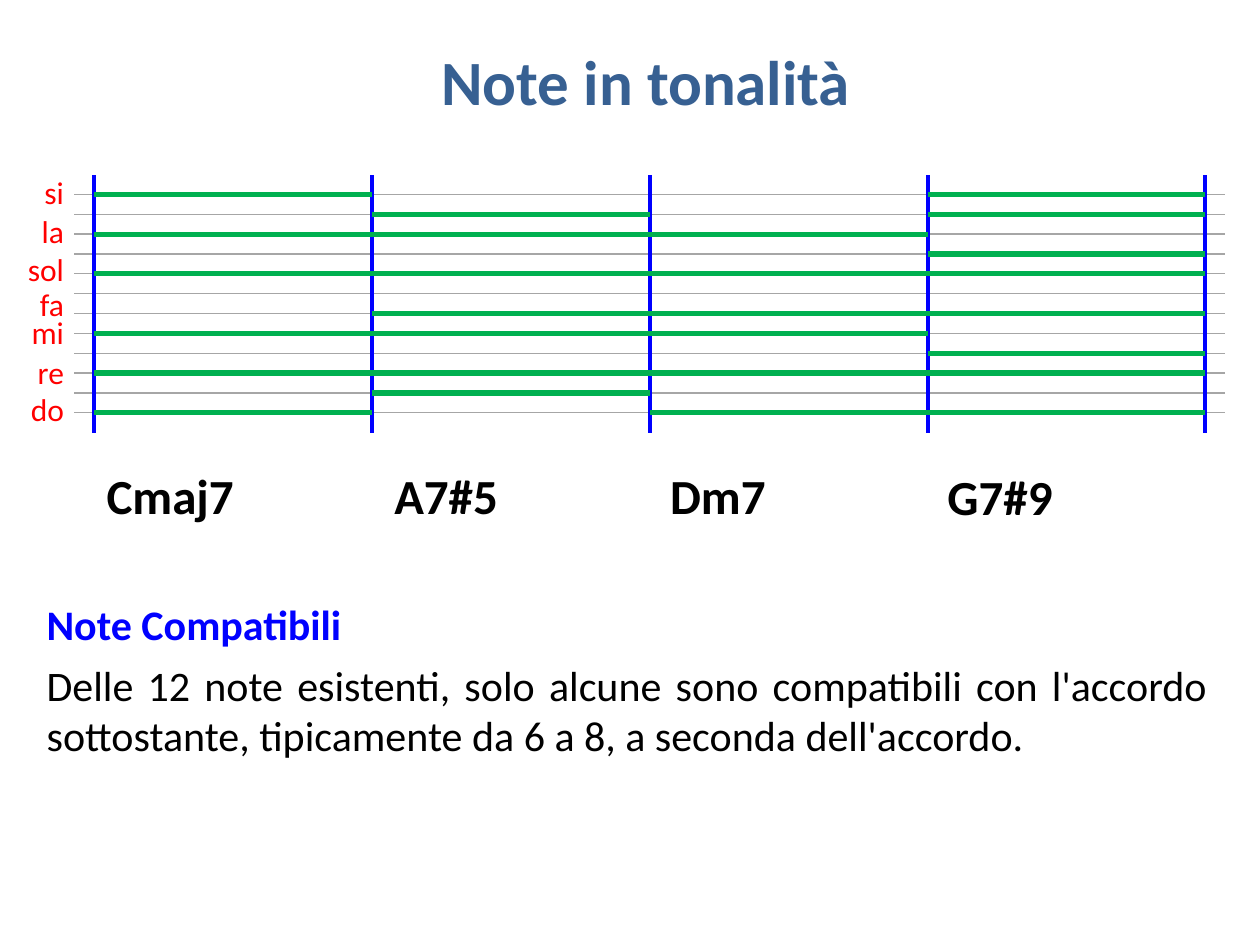
"""Build a slide that shows which notes fit each chord of a progression."""
import dataclasses

import lxml.etree
import pptx
import pptx.dml.color
import pptx.enum.shapes
import pptx.enum.text
import pptx.oxml.ns
import pptx.util

Cm = pptx.util.Cm
Pt = pptx.util.Pt
Align = pptx.enum.text.PP_ALIGN
Auto = pptx.enum.text.MSO_AUTO_SIZE


@dataclasses.dataclass(frozen=True)
class Theme:
    font: str = "Calibri"
    title: str = "376092"
    blue: str = "0000FF"
    grey: str = "A6A6A6"
    green: str = "00B050"
    red: str = "FF0000"
    black: str = "000000"
    head: int = 36
    chord: int = 28
    body: int = 24
    note: int = 18
    thin: float = 0.75
    bar: float = 2.25
    thick: float = 3


class Page:
    def __init__(self, deck, theme):
        self.theme = theme
        self.slide = deck.slides.add_slide(deck.slide_layouts[6])
        self.shapes = self.slide.shapes

    def line(self, x1, y1, x2, y2, color, width, group=None):
        shapes = group.shapes if group is not None else self.shapes
        line = shapes.add_connector(
            pptx.enum.shapes.MSO_CONNECTOR.STRAIGHT, Cm(x1), Cm(y1), Cm(x2), Cm(y2))
        line.line.color.rgb = pptx.dml.color.RGBColor.from_string(color)
        line.line.width = Pt(width)
        lxml.etree.SubElement(line.element.spPr, pptx.oxml.ns.qn("a:effectLst"))

    def text(self, left, top, width, height, wrap=True):
        box = self.shapes.add_textbox(Cm(left), Cm(top), Cm(width), Cm(height))
        frame = box.text_frame
        frame.word_wrap = wrap
        frame.auto_size = Auto.SHAPE_TO_FIT_TEXT
        return frame

    def para(self, frame, words, size, color, bold=False, align=Align.LEFT,
             before=None, space=None):
        first = frame.paragraphs[0]
        para = frame.add_paragraph() if first.runs else first
        para.add_run().text = words
        para.alignment = align
        para.font.name = self.theme.font
        para.font.size = Pt(size)
        para.font.bold = bold
        para.font.color.rgb = pptx.dml.color.RGBColor.from_string(color)
        if before is not None:
            para.space_before = Pt(before)
        if space is not None:
            para.line_spacing = Pt(space)


LEFT, TOP = 1.9, 3.92
BEAT, STEP, EDGE = 5.6, 0.4, 0.4
ROWS = 12
CHORDS = [
    ("Cmaj7", 1.9, 9.25, 3.1, (0, 2, 4, 7, 9, 11)),
    ("A7#5", 7.7, 9.25, 2.64, (1, 2, 4, 6, 7, 9, 10)),
    ("Dm7", 13.26, 9.25, 2.46, (2, 4, 6, 7, 9, 11)),
    ("G7#9", 18.85, 9.27, 2.67, (0, 1, 3, 4, 6, 8, 9, 11)),
]
NOTES = [("si", 22), ("la", 22), ("sol", 22), ("fa", 20), ("mi", 16), ("re", 23), ("do", 21)]


def main():
    deck = pptx.Presentation()
    deck.slide_width, deck.slide_height = Cm(25.4), Cm(19.05)
    theme = Theme()
    page = Page(deck, theme)

    title = page.text(2.54, 0.74, 20.96, 1.8)
    page.para(title, "Note in tonalità", theme.head, theme.title, True, Align.CENTER)

    grid = page.shapes.add_group_shape()
    right = LEFT + BEAT * len(CHORDS)
    base = TOP + STEP * (ROWS - 1)
    for row in range(ROWS):
        y = TOP + row * STEP
        page.line(LEFT - EDGE, y, right + EDGE, y, theme.grey, theme.thin, grid)
    for beat in range(len(CHORDS) + 1):
        x = LEFT + beat * BEAT
        page.line(x, base + EDGE, x, TOP - EDGE, theme.blue, theme.bar, grid)

    for beat, (name, left, top, width, rows) in enumerate(CHORDS):
        x = LEFT + beat * BEAT
        for row in rows:
            y = TOP + row * STEP
            page.line(x, y, x + BEAT, y, theme.green, theme.thick)
        label = page.text(left, top, width, 1.45, wrap=False)
        page.para(label, name, theme.chord, theme.black, True)

    body = page.text(0.69, 11.94, 23.9, 3.56)
    page.para(body, "Note Compatibili", theme.body, theme.blue, True, Align.JUSTIFY)
    page.para(body, "Delle 12 note esistenti, solo alcune sono compatibili con l'accordo "
              "sottostante, tipicamente da 6 a 8, a seconda dell'accordo.",
              theme.body, theme.black, align=Align.JUSTIFY, before=6)

    scale = page.text(0.3, 3.35, 1.24, 5.46, wrap=False)
    for name, space in NOTES:
        page.para(scale, name, theme.note, theme.red, align=Align.RIGHT, space=space)

    deck.save("out.pptx")


if __name__ == "__main__":
    main()
